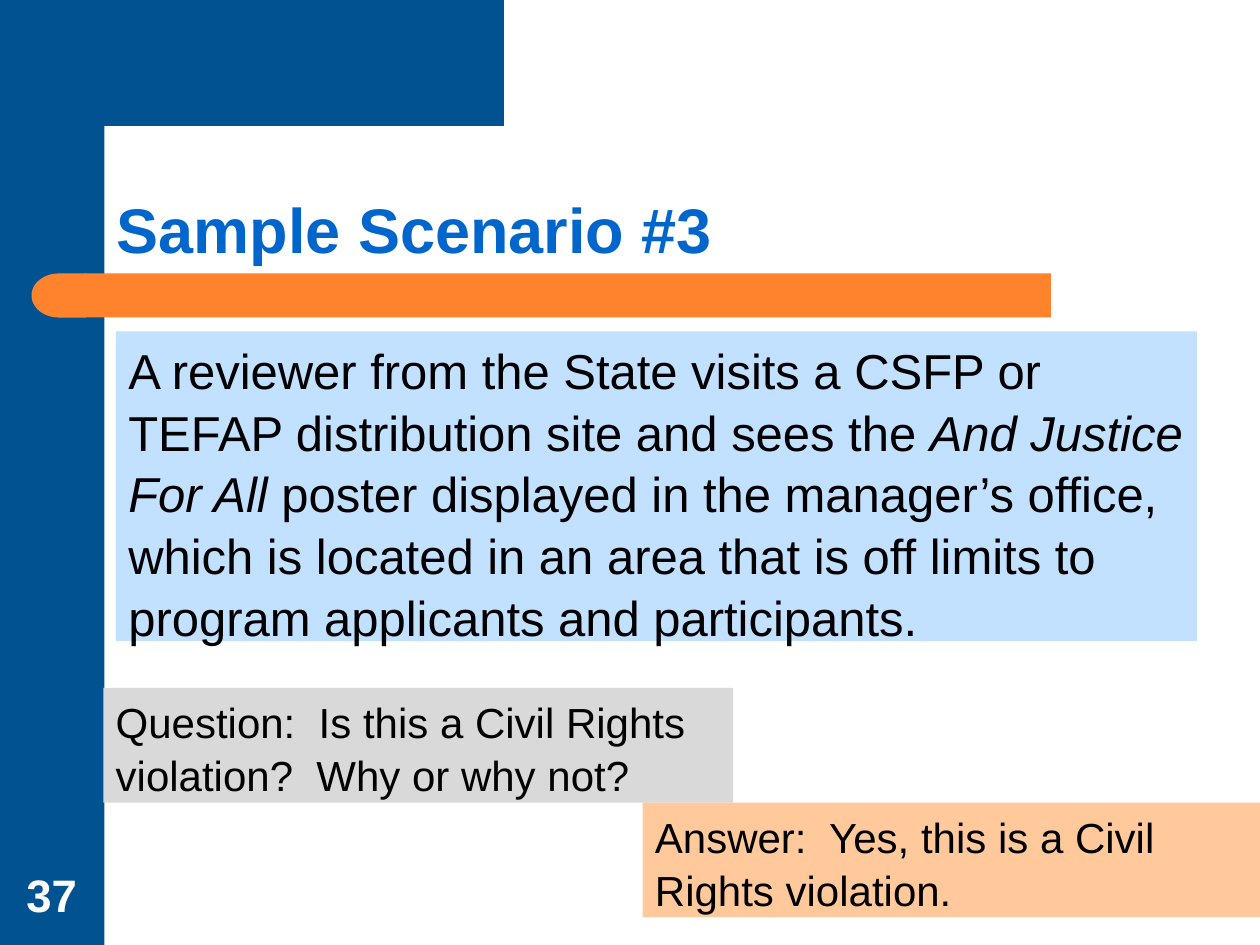
import math
from pptx import Presentation
from pptx.dml.color import RGBColor
from pptx.enum import shapes, text
from pptx.util import Inches, Pt

THEME = {
    "font": "Arial",
    "navy": "005390", "orange": "FF822D", "title": "0066CC",
    "sky": "C2E0FF", "grey": "D9D9D9", "peach": "FFC99C",
    "black": "000000", "white": "FFFFFF",
    "title_size": 36, "body_size": 28, "note_size": 24, "number_size": 26,
}

TITLE = "Sample Scenario #3"
NUMBER = "37"

# (box, fill, type size, runs as (text, italic))
PANELS = [
    ((0.92, 2.63, 8.58, 2.46), "sky", "body_size", [
        ("A reviewer from the State visits a CSFP or TEFAP distribution site "
         "and sees the ", False),
        ("And Justice For All ", True),
        ("poster displayed in the manager’s office, which is located in an area "
         "that is off limits to program applicants and participants.", False)]),
    ((0.82, 5.46, 5, 0.91), "grey", "note_size", [
        ("Question:  Is this a Civil Rights violation?  Why or why not?", False)]),
    ((5.1, 6.37, 5, 0.91), "peach", "note_size", [
        ("Answer:  Yes, this is a Civil Rights violation.", False)]),
]

SHAPE = shapes.MSO_SHAPE
# (preset, box, fill, rotation)
BARS = [
    (SHAPE.RECTANGLE, (0, 0, 0.83, 7.5), "navy", 0),
    (SHAPE.RECTANGLE, (0.67, 2.17, 7.67, 0.35), "orange", 0),
    (SHAPE.FLOWCHART_DELAY, (0.25, 2.17, 0.43, 0.35), "orange", 180),
]


def color(name):
    return RGBColor.from_string(THEME[name])


def paint(sp, fill):
    sp.fill.solid()
    sp.fill.fore_color.rgb = color(fill)
    sp.line.fill.background()
    sp.shadow.inherit = False


def add_shape(s, preset, box, fill, rotation=0):
    sp = s.shapes.add_shape(preset, *map(Inches, box))
    sp.rotation = rotation
    paint(sp, fill)
    return sp


def add_corner(s):
    """Top band whose inner corner is rounded into the side band."""
    radius, left, top, right = 0.33, 0.83, 0.83, 3.5
    arc = [(left + radius * (1 - math.sin(a)), top + radius * (1 - math.cos(a)))
           for a in (math.radians(d) for d in range(0, 91, 5))]
    points = [(right, 0), (right, top), *arc, (left, 1.28), (0.5, 1.28), (0.5, 0)]
    pen = s.shapes.build_freeform(*points[0], scale=Inches(1))
    pen.add_line_segments(points[1:], close=True)
    paint(pen.convert_to_shape(), "navy")


def write(sp, runs, size, ink, bold=None, spacing=None,
          anchor=text.MSO_ANCHOR.TOP, align=text.PP_ALIGN.LEFT):
    tf = sp.text_frame
    tf.word_wrap = True
    tf.vertical_anchor = anchor
    p = tf.paragraphs[0]
    p.alignment = align
    p.line_spacing = spacing
    for words, italic in runs:
        r = p.add_run()
        r.text = words
        r.font.name = THEME["font"]
        r.font.size = Pt(THEME[size])
        r.font.color.rgb = color(ink)
        r.font.bold = bold
        r.font.italic = italic


def main():
    prs = Presentation()
    prs.slide_width, prs.slide_height = Inches(10), Inches(7.5)
    s = prs.slides.add_slide(prs.slide_layouts[6])

    for bar in BARS:
        add_shape(s, *bar)
    add_corner(s)

    bottom = text.MSO_ANCHOR.BOTTOM
    title = s.shapes.add_textbox(*map(Inches, (0.83, 0.92, 8.67, 1.25)))
    write(title, [(TITLE, False)], "title_size", "title", True, 0.9, bottom)
    number = s.shapes.add_textbox(*map(Inches, (0.09, 6.83, 0.64, 0.53)))
    write(number, [(NUMBER, False)], "number_size", "white", True,
          anchor=bottom, align=text.PP_ALIGN.CENTER)

    for box, fill, size, runs in PANELS:
        sp = add_shape(s, SHAPE.RECTANGLE, box, fill)
        write(sp, runs, size, "black", spacing=1.05)

    prs.save("out.pptx")


if __name__ == "__main__":
    main()
